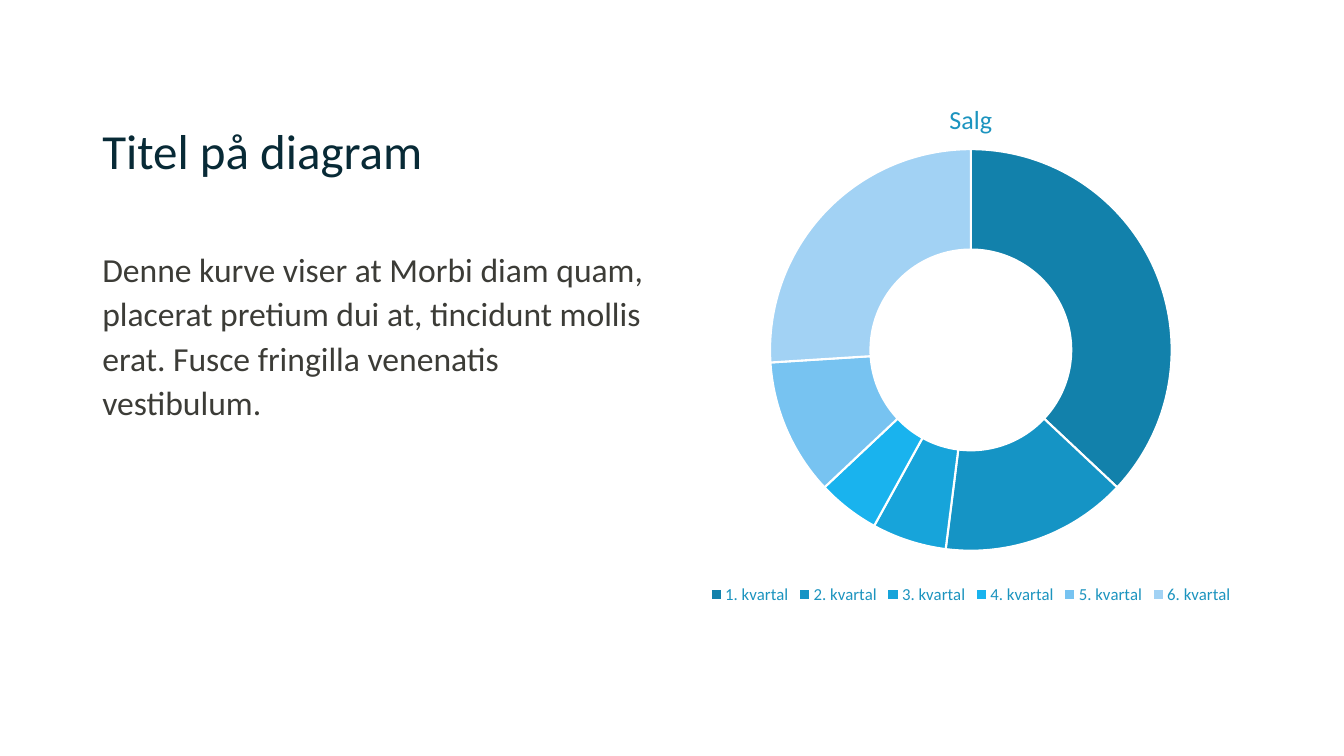
from lxml.etree import SubElement
from pptx import Presentation
from pptx.chart.data import CategoryChartData
from pptx.dml.color import RGBColor
from pptx.enum.chart import XL_CHART_TYPE, XL_LEGEND_POSITION
from pptx.enum.text import MSO_ANCHOR
from pptx.oxml.ns import qn
from pptx.util import Pt

NAVY = RGBColor(0x08, 0x2A, 0x36)
GREY = RGBColor(0x3C, 0x3C, 0x37)
BLUE = RGBColor(0x1C, 0x94, 0xBF)
WHITE = RGBColor(0xFF, 0xFF, 0xFF)
QUARTER_COLORS = [
    RGBColor(0x12, 0x81, 0xAB),
    RGBColor(0x15, 0x94, 0xC5),
    RGBColor(0x17, 0xA4, 0xDA),
    RGBColor(0x19, 0xB3, 0xEE),
    RGBColor(0x77, 0xC3, 0xF1),
    RGBColor(0xA2, 0xD2, 0xF4),
]
SALES = [37, 15, 6, 5, 11, 26]


class SlideBuilder:
    def __init__(self, slide, font_name):
        self.slide = slide
        self.font_name = font_name

    def style(self, font, size, color):
        font.name = self.font_name
        font.size = Pt(size)
        font.bold = False
        font.color.rgb = color

    def text(self, text, box, size, color, spacing, anchor=MSO_ANCHOR.TOP):
        sp = self.slide.shapes.add_textbox(*map(Pt, box))
        tf = sp.text_frame
        tf.word_wrap = True
        tf.vertical_anchor = anchor
        p = tf.paragraphs[0]
        p.text = text
        p.line_spacing = spacing
        self.style(p.runs[0].font, size, color)

    def doughnut(self, title, values, colors, box, plot_area, hole):
        data = CategoryChartData()
        data.categories = [f"{i}. kvartal" for i in range(1, len(values) + 1)]
        data.add_series(title, values)
        chart = self.slide.shapes.add_chart(
            XL_CHART_TYPE.DOUGHNUT, *map(Pt, box), data).chart
        self.style(chart.font, 10, NAVY)

        chart.has_title = True
        tf = chart.chart_title.text_frame
        tf.text = title
        self.style(tf.paragraphs[0].runs[0].font, 18.6, BLUE)
        chart.chart_title.include_in_layout = False

        chart.has_legend = True
        chart.legend.position = XL_LEGEND_POSITION.BOTTOM
        chart.legend.include_in_layout = False
        self.style(chart.legend.font, 12, BLUE)

        plot = chart.plots[0]
        plot.vary_by_categories = True
        for i, color in enumerate(colors):
            fmt = plot.series[0].points[i].format
            fmt.fill.solid()
            fmt.fill.fore_color.rgb = color
            fmt.line.color.rgb = WHITE
            fmt.line.width = Pt(1.5)
        self.set_layout(chart, plot_area, hole)

    def set_layout(self, chart, plot_area, hole):
        area = chart.plots[0]._element.getparent()
        area.find(".//" + qn("c:holeSize")).set("val", str(hole))
        for old in area.findall(qn("c:layout")):
            area.remove(old)
        layout = area.makeelement(qn("c:layout"))
        area.insert(0, layout)
        manual = SubElement(layout, qn("c:manualLayout"))
        settings = [("layoutTarget", "inner"), ("xMode", "edge"), ("yMode", "edge")]
        settings += zip("xywh", map(str, plot_area))
        for tag, value in settings:
            SubElement(manual, qn(f"c:{tag}")).set("val", value)


def main():
    prs = Presentation()
    prs.slide_width, prs.slide_height = Pt(960), Pt(540)
    s = SlideBuilder(prs.slides.add_slide(prs.slide_layouts[6]), "Calibri")
    s.doughnut("Salg", SALES, QUARTER_COLORS, (475, 57.5, 437, 377.5),
               (0.17, 0.13, 0.66, 0.76), 75)
    s.text("Denne kurve viser at Morbi diam quam, placerat pretium dui at, "
           "tincidunt mollis erat. Fusce fringilla venenatis vestibulum.",
           (66, 171.5, 408, 150), 24, GREY, 1.1)
    s.text("Titel på diagram", (66, 57.5, 828, 104.5), 35, NAVY, 0.9,
           MSO_ANCHOR.MIDDLE)
    prs.save("out.pptx")


if __name__ == "__main__":
    main()
